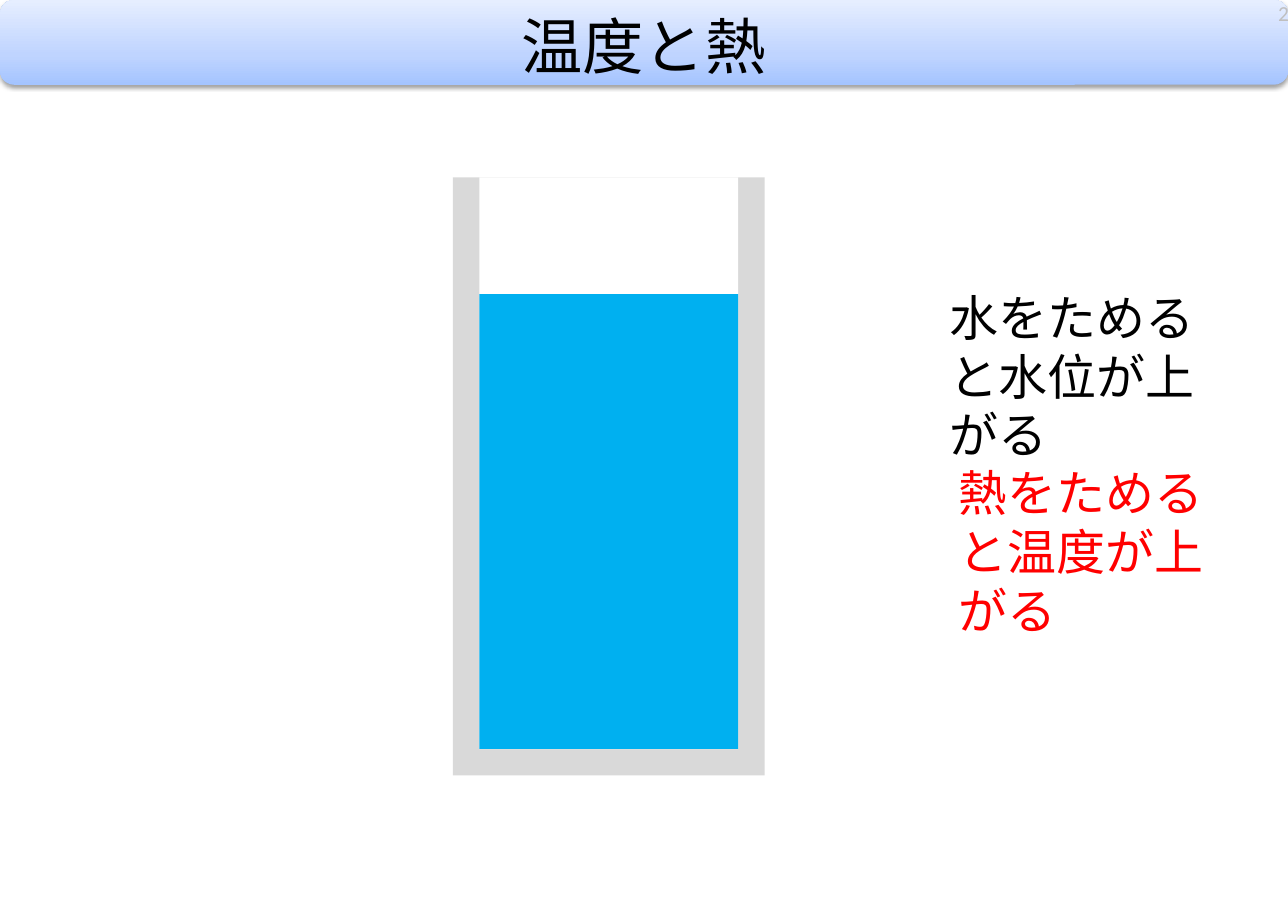
"""Build a slide that likens heat and temperature to water and its level."""
from lxml import etree
from pptx import Presentation
from pptx.dml.color import RGBColor
from pptx.enum.shapes import MSO_SHAPE as Shape
from pptx.enum.text import MSO_ANCHOR as Anchor, MSO_AUTO_SIZE as Fit, PP_ALIGN as Align
from pptx.oxml import parse_xml
from pptx.oxml.ns import nsdecls, qn
from pptx.util import Inches, Pt

BLACK = RGBColor(0x00, 0x00, 0x00)
RED = RGBColor(0xFF, 0x00, 0x00)
WHITE = RGBColor(0xFF, 0xFF, 0xFF)
SILVER = RGBColor(0xBF, 0xBF, 0xBF)
GLASS = RGBColor(0xD9, 0xD9, 0xD9)
WATER = RGBColor(0x00, 0xB0, 0xF0)
BAND_STOPS = [
    (0, RGBColor(0xA4, 0xC4, 0xFF)),
    (35, RGBColor(0xBF, 0xD4, 0xFF)),
    (100, RGBColor(0xE6, 0xEE, 0xFF)),
]
JAPANESE, LATIN = "Noto Sans CJK JP", "Calibri"

WIDTH, HEIGHT = 11.69, 8.27
BAND_HEIGHT = 0.77
GLASS_LEFT, GLASS_TOP, GLASS_WIDTH, GLASS_HEIGHT = 4.11, 1.61, 2.83, 5.43
WALL, WATER_TOP = 0.24, 2.67
INNER_LEFT, INNER_WIDTH = GLASS_LEFT + WALL, GLASS_WIDTH - 2 * WALL
FLOOR = GLASS_TOP + GLASS_HEIGHT - WALL

VESSEL = [
    (GLASS_LEFT, GLASS_TOP, GLASS_WIDTH, GLASS_HEIGHT, GLASS),
    (INNER_LEFT, GLASS_TOP, INNER_WIDTH, FLOOR - GLASS_TOP, WHITE),
    (INNER_LEFT, WATER_TOP, INNER_WIDTH, FLOOR - WATER_TOP, WATER),
]

EDGES = ("margin_left", "margin_top", "margin_right", "margin_bottom")
FLUSH = {"vertical_anchor": Anchor.MIDDLE, **dict.fromkeys(EDGES, 0)}
HEADING = {**FLUSH, "word_wrap": False}
NUMBER = {**FLUSH, "word_wrap": True, "auto_size": Fit.SHAPE_TO_FIT_TEXT}
NOTE = {"word_wrap": True, "auto_size": Fit.SHAPE_TO_FIT_TEXT}
TEXTS = [
    ("温度と熱", (0, 0.01, WIDTH, 0.79), HEADING, Align.CENTER, 40, JAPANESE, BLACK),
    ("2", (11.36, 0, 0.34, 0.24), NUMBER, Align.RIGHT, 14, LATIN, SILVER),
    ("水をためると水位が上がる", (8.52, 2.56, 2.76, 1.18), NOTE, Align.LEFT, 32, JAPANESE, BLACK),
    ("熱をためると温度が上がる", (8.6, 4.15, 2.76, 1.18), NOTE, Align.LEFT, 32, JAPANESE, RED),
]


def add_block(page, kind, area, color):
    block = page.shapes.add_shape(kind, *map(Inches, area))
    block.shadow.inherit = False
    block.line.fill.background()
    block.fill.solid()
    block.fill.fore_color.rgb = color
    return block


def add_band(page):
    band = add_block(page, Shape.ROUNDED_RECTANGLE, (0, 0, WIDTH, BAND_HEIGHT), WHITE)
    stops = "".join(
        f'<a:gs pos="{share * 1000}"><a:srgbClr val="{color}"/></a:gs>'
        for share, color in BAND_STOPS
    )
    gradient = parse_xml(
        f'<a:gradFill {nsdecls("a")} rotWithShape="1"><a:gsLst>{stops}</a:gsLst>'
        '<a:lin ang="16200000" scaled="0"/></a:gradFill>'
    )
    shadow = parse_xml(
        f'<a:outerShdw {nsdecls("a")} blurRad="{Pt(3.1)}" dist="{Pt(1.6)}" dir="5400000" '
        f'rotWithShape="0"><a:srgbClr val="{BLACK}"><a:alpha val="38000"/></a:srgbClr></a:outerShdw>'
    )
    look = band.element.spPr
    look.replace(look.find(qn("a:solidFill")), gradient)
    look.find(qn("a:effectLst")).append(shadow)


def add_text(page, words, area, layout, align, size, face, color):
    frame = page.shapes.add_textbox(*map(Inches, area)).text_frame
    for name, value in layout.items():
        setattr(frame, name, value)
    para = frame.paragraphs[0]
    para.alignment = align
    span = para.add_run()
    span.text = words
    for name, value in {"size": Pt(size), "name": face}.items():
        setattr(span.font, name, value)
    span.font.color.rgb = color
    etree.SubElement(span.font._element, qn("a:ea"), typeface=face)


def main():
    deck = Presentation()
    deck.slide_width, deck.slide_height = Inches(WIDTH), Inches(HEIGHT)
    page = deck.slides.add_slide(deck.slide_layouts[6])
    add_band(page)
    for *area, color in VESSEL:
        add_block(page, Shape.RECTANGLE, area, color)
    for text in TEXTS:
        add_text(page, *text)
    deck.save("out.pptx")


if __name__ == "__main__":
    main()
